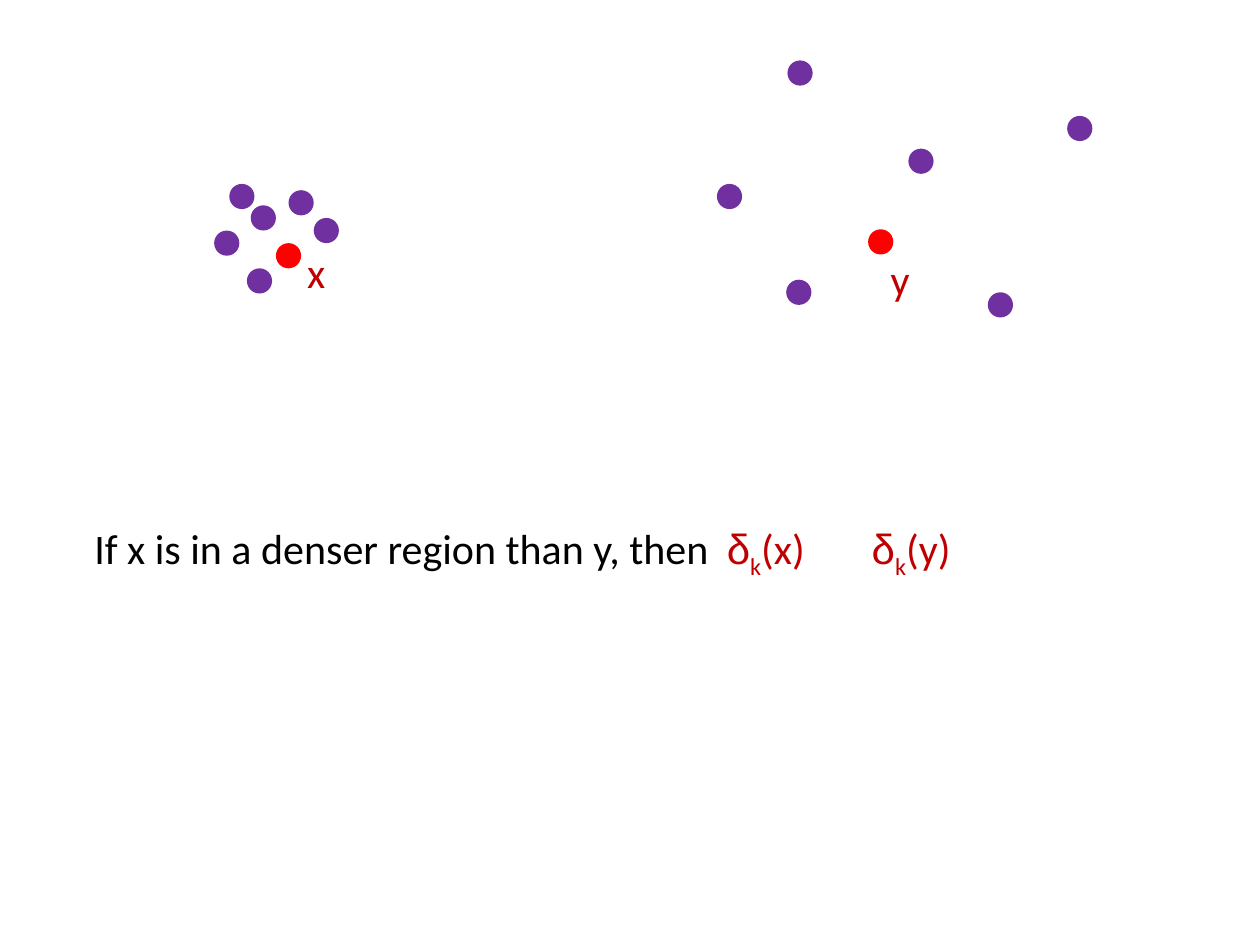
"""Build a slide that contrasts a dense and a sparse region of points."""
from pptx import Presentation as Deck
from pptx.dml.color import RGBColor as Color
from pptx.enum.shapes import MSO_SHAPE as Form
from pptx.enum.text import MSO_AUTO_SIZE as Fit
from pptx.oxml.ns import qn
from pptx.util import Inches, Pt
from lxml.etree import SubElement as Sub

COLS, ROWS = 100, 75


def hue(code):
    return Color.from_string(code)


def write(para, text, size=24, font="Calibri", color="C00000", base=0):
    run = para.add_run()
    run.text = text
    run.font.size = Pt(size)
    run.font.name = font
    run.font.color.rgb = hue(color)
    if base:
        run.font._element.set("baseline", str(base * 1000))


class Board:
    dot = 2
    near = "7030A0"
    core = "FF0000"

    def __init__(self, deck):
        self.slide = deck.slides.add_slide(deck.slide_layouts[6])
        self.cell = deck.slide_width // COLS

    def span(self, *cells):
        return [round(n * self.cell) for n in cells]

    def cloud(self, core, spots):
        group = self.slide.shapes.add_group_shape()
        for spot in [*spots, core]:
            dot = group.shapes.add_shape(
                Form.OVAL, *self.span(*spot, self.dot, self.dot))
            dot.shadow.inherit = False
            dot.fill.solid()
            dot.fill.fore_color.rgb = hue(self.core if spot == core else self.near)
            dot.line.fill.background()

    def text(self, col, row, wide, parts, tabs=()):
        box = self.slide.shapes.add_textbox(*self.span(col, row, wide, 5))
        frame = box.text_frame
        frame.word_wrap = True
        frame.auto_size = Fit.SHAPE_TO_FIT_TEXT
        para = frame.paragraphs[0]
        if tabs:
            stops = Sub(para._p.get_or_add_pPr(), qn("a:tabLst"))
            for place in self.span(*tabs):
                Sub(stops, qn("a:tab"), pos=str(place), algn="l")
        for words, look in parts:
            write(para, words, **look)


def delta(name):
    return [("δ", {"font": "Arial"}), ("k", {"base": -25}), (f"({name})", {})]


def main():
    deck = Deck()
    deck.slide_width, deck.slide_height = Inches(10), Inches(7.5)
    board = Board(deck)
    board.cloud((21.9, 19.3), [(18.2, 14.6), (19.9, 16.3), (17, 18.3),
                               (22.9, 15.1), (24.9, 17.3), (19.6, 21.3)])
    board.cloud((68.9, 18.2), [(62.5, 4.8), (56.9, 14.6), (72.1, 11.8),
                               (78.4, 23.2), (84.7, 9.2), (62.4, 22.2)])
    for name, col, row in (("x", 23.4, 19.1), ("y", 69.7, 19.6)):
        board.text(col, row, 4.4, [(name, {})])
    lead = ("If x is in a denser region than y, then\t", {"color": "000000"})
    board.text(6.5, 41, 90, [lead, *delta("x"), ("\t", {}), *delta("y")],
               tabs=(50.2, 61.7))
    deck.save("out.pptx")


if __name__ == "__main__":
    main()
